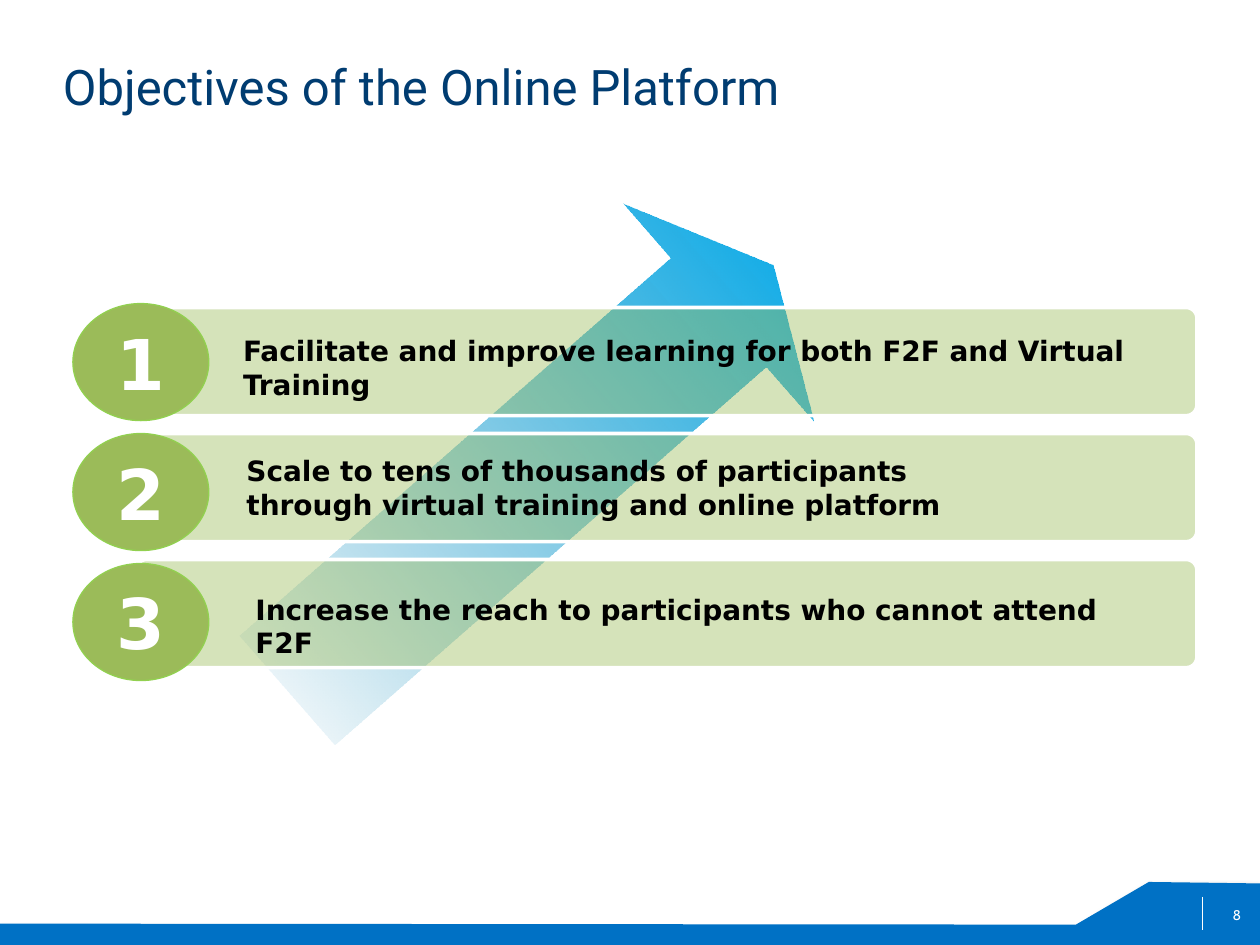
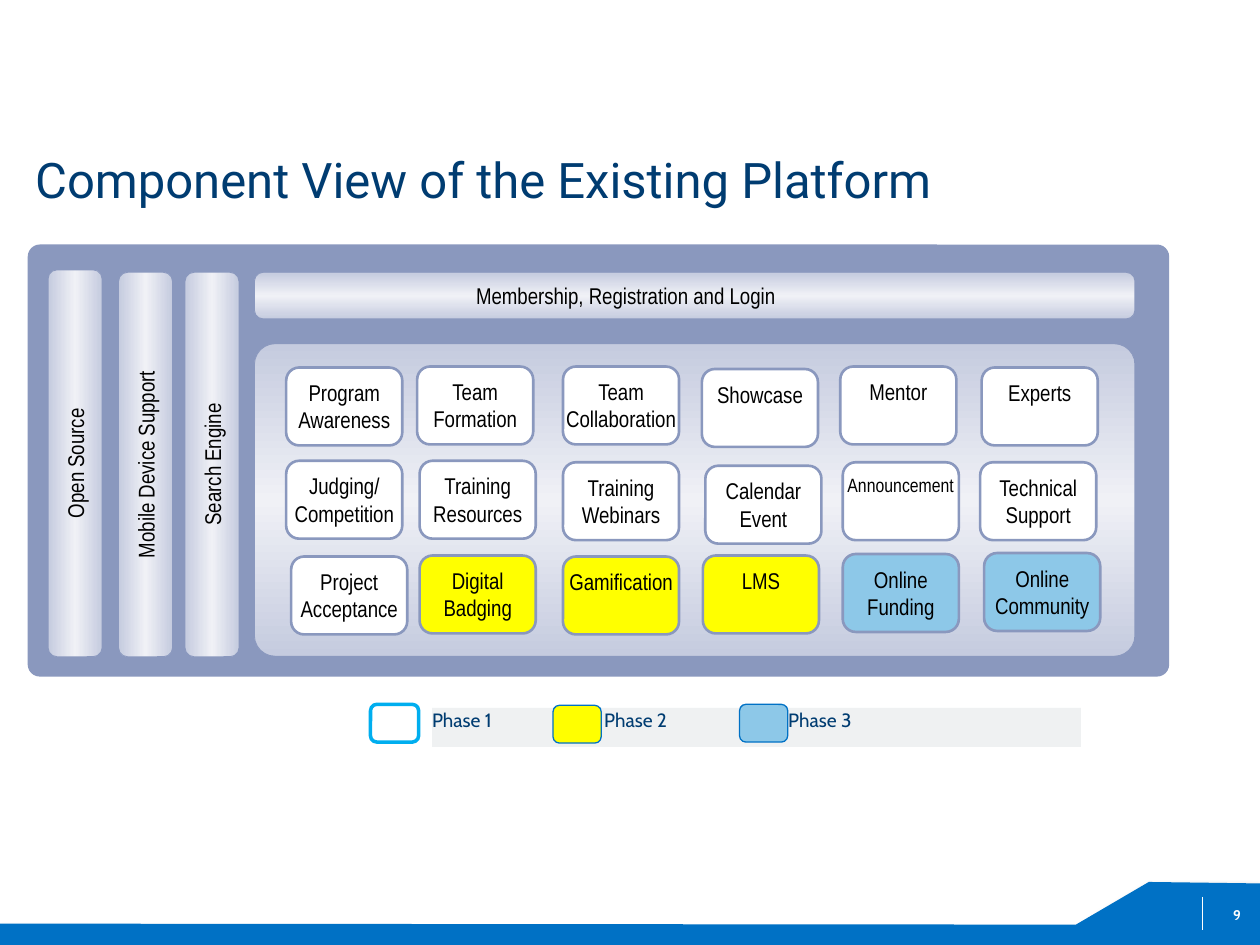
from lxml import etree
from pptx import Presentation
from pptx.dml.color import RGBColor
from pptx.enum.shapes import MSO_CONNECTOR, MSO_SHAPE
from pptx.enum.text import MSO_ANCHOR as ANCHOR, PP_ALIGN as ALIGN
from pptx.oxml.ns import qn
from pptx.util import Cm, Pt

WHITE = RGBColor(0xFF, 0xFF, 0xFF)
BLACK = RGBColor(0x00, 0x00, 0x00)
NAVY = RGBColor(0x00, 0x3C, 0x71)
BLUE = RGBColor(0x00, 0x71, 0xC5)
DEEP_CYAN = RGBColor(0x00, 0x7C, 0xAB)
CYAN = RGBColor(0x00, 0xAE, 0xEF)
OLIVE = RGBColor(0x9B, 0xBB, 0x59)
LIME = RGBColor(0x92, 0xD0, 0x50)
SLATE = RGBColor(0x8A, 0x98, 0xBE)
LAVENDER = RGBColor(0xC5, 0xCB, 0xDF)
PALE = RGBColor(0xF0, 0xF1, 0xF6)
GREY = RGBColor(0xEF, 0xF1, 0xF2)
YELLOW = RGBColor(0xFF, 0xFF, 0x00)
SKY = RGBColor(0x8D, 0xC8, 0xE8)

TITLE_FONT, FOOTER_FONT = "Roboto", "Cabin"
OBJECTIVE_FONT, COMPONENT_FONT = "DejaVu Sans", "Arial Narrow"

METAL = [(0, LAVENDER, 100), (50, PALE, 100), (100, LAVENDER, 100)]
FADE = [(0, DEEP_CYAN, 0), (100, CYAN, 100)]

SLIDE_WIDTH, SLIDE_HEIGHT = 25.4, 19.05
FOOTER_OUTLINE = [(SLIDE_WIDTH, 17.81), (23.16, 17.78), (21.69, 18.64),
                  (0, 18.62), (0, SLIDE_HEIGHT), (SLIDE_WIDTH, SLIDE_HEIGHT)]

# text, text indent and drop, badge drop
OBJECTIVES = [
    ("Facilitate and improve learning for both F2F and Virtual Training",
     1.91, 0.4, -0.08),
    ("Scale to tens of thousands of participants\n"
     "through virtual training and online platform", 1.98, 0.28, 0),
    ("Increase the reach to participants who cannot attend F2F",
     2.16, 0.53, 0.08),
]

# label, left and top within the panel, fill
COMPONENTS = [
    ("Program\nAwareness", 0.64, 0.48, WHITE),
    ("Team\nFormation", 3.28, 0.46, WHITE),
    ("Team\nCollaboration", 6.22, 0.46, WHITE),
    ("Showcase", 9.02, 0.51, WHITE),
    ("Mentor", 11.81, 0.46, WHITE),
    ("Experts", 14.66, 0.48, WHITE),
    ("Judging/\nCompetition", 0.64, 2.36, WHITE),
    ("Training\nResources", 3.33, 2.36, WHITE),
    ("Training\nWebinars", 6.22, 2.39, WHITE),
    ("Calendar\nEvent", 9.09, 2.46, WHITE),
    ("Announcement", 11.86, 2.39, WHITE),
    ("Technical\nSupport", 14.63, 2.39, WHITE),
    ("Project\nAcceptance", 0.74, 4.29, WHITE),
    ("Digital\nBadging", 3.33, 4.27, YELLOW),
    ("Gamification", 6.22, 4.29, YELLOW),
    ("LMS", 9.04, 4.27, YELLOW),
    ("Online\nFunding", 11.86, 4.24, SKY),
    ("Online\nCommunity", 14.71, 4.22, SKY),
]

# label, left and top within the frame
SIDE_BARS = [("Open Source", 0.41, 0.51),
             ("Mobile Device Support", 1.83, 0.56),
             ("Search Engine", 3.17, 0.56)]

# swatch left and top within the legend, fill, line, line width
PHASES = [(-1.24, -0.07, WHITE, CYAN, 2),
          (2.44, -0.05, YELLOW, BLUE, 0.75),
          (6.2, -0.07, SKY, BLUE, 0.75)]
PHASE_TABS = [3.47, 7.18]


def set_gradient(shape, stops, angle):
    """Fill with (position %, colour, opacity %) stops."""
    shape.fill.background()
    properties = shape._element.spPr
    gradient = etree.Element(qn("a:gradFill"), rotWithShape="1")
    stop_list = etree.SubElement(gradient, qn("a:gsLst"))
    for position, colour, opacity in stops:
        stop = etree.SubElement(stop_list, qn("a:gs"), pos=str(position * 1000))
        rgb = etree.SubElement(stop, qn("a:srgbClr"), val=str(colour))
        if opacity < 100:
            etree.SubElement(rgb, qn("a:alpha"), val=str(opacity * 1000))
    etree.SubElement(gradient, qn("a:lin"), ang=str(angle * 60000), scaled="0")
    properties.replace(properties.find(qn("a:noFill")), gradient)


def set_opacity(shape, percent):
    rgb = shape._element.spPr.find(qn("a:solidFill")).find(qn("a:srgbClr"))
    etree.SubElement(rgb, qn("a:alpha"), val=str(percent * 1000))


def add_shape(slide, kind, box, fill=None, line=None, line_width=0.5,
              adjustments=()):
    shape = slide.shapes.add_shape(kind, *map(Cm, box))
    shape.shadow.inherit = False
    if fill is not None:
        shape.fill.solid()
        shape.fill.fore_color.rgb = fill
    if line is None:
        shape.line.fill.background()
    else:
        shape.line.color.rgb = line
        shape.line.width = Pt(line_width)
    for index, value in enumerate(adjustments):
        shape.adjustments[index] = value
    return shape


def write(shape, text, font, size, colour, bold=False, align=ALIGN.LEFT,
          anchor=ANCHOR.TOP, margins=(0, 0, 0, 0), wrap=True):
    frame = shape.text_frame
    frame.text = text
    frame.word_wrap = wrap
    frame.vertical_anchor = anchor
    (frame.margin_left, frame.margin_top,
     frame.margin_right, frame.margin_bottom) = map(Cm, margins)
    for paragraph in frame.paragraphs:
        paragraph.alignment = align
        for run in paragraph.runs:
            run.font.name = font
            run.font.size = Pt(size)
            run.font.bold = bold
            run.font.color.rgb = colour


def add_text(slide, box, *args, **options):
    write(slide.shapes.add_textbox(*map(Cm, box)), *args, **options)


def add_footer(slide, number, bold):
    builder = slide.shapes.build_freeform(
        *map(Cm, FOOTER_OUTLINE[0]), scale=1.0)
    builder.add_line_segments(
        [(Cm(x), Cm(y)) for x, y in FOOTER_OUTLINE[1:]], close=True)
    band = builder.convert_to_shape()
    band.fill.solid()
    band.fill.fore_color.rgb = BLUE
    band.line.fill.background()
    band.shadow.inherit = False
    effects = band._element.spPr.find(qn("a:effectLst"))
    shadow = etree.SubElement(
        effects, qn("a:outerShdw"), blurRad=str(Pt(3.1)), dist=str(Pt(1.8)),
        dir="5400000", rotWithShape="0")
    rgb = etree.SubElement(shadow, qn("a:srgbClr"), val=str(BLACK))
    etree.SubElement(rgb, qn("a:alpha"), val="35000")

    divider = slide.shapes.add_connector(
        MSO_CONNECTOR.STRAIGHT, Cm(24.23), Cm(18.08), Cm(24.23), Cm(18.75))
    divider.line.color.rgb = WHITE
    divider.line.width = Pt(0.25)
    etree.SubElement(divider._element.spPr, qn("a:effectLst"))
    add_text(slide, (19.1, 17.93, 5.92, 1.02), str(number), FOOTER_FONT, 8,
             WHITE, bold=bold, align=ALIGN.RIGHT, anchor=ANCHOR.MIDDLE)


def start_slide(presentation, title, title_box, number, bold_number=False):
    slide = presentation.slides.add_slide(presentation.slide_layouts[6])
    add_footer(slide, number, bold_number)
    add_text(slide, title_box, title, TITLE_FONT, 28, NAVY)
    return slide


def add_rising_arrow(slide, box):
    arrow = add_shape(slide, MSO_SHAPE.RIGHT_ARROW, box,
                      adjustments=(0.5, 0.25))
    set_gradient(arrow, FADE, 0)
    arrow.rotation = 318.8


def add_objectives(slide, left, top, width, pitch):
    for index, (text, indent, drop, badge_drop) in enumerate(OBJECTIVES):
        row_top = top + index * pitch
        bar = add_shape(slide, MSO_SHAPE.ROUNDED_RECTANGLE,
                        (left, row_top, width, 2.18), OLIVE, WHITE, 2, (0.1,))
        set_opacity(bar, 41)
        add_text(slide, (left + indent, row_top + drop, 18.75, 1.63), text,
                 OBJECTIVE_FONT, 16, BLACK, bold=True,
                 margins=(0.25, 0.13, 0.25, 0.13))
        badge = add_shape(slide, MSO_SHAPE.OVAL,
                          (left - 1.27, row_top + badge_drop, 2.74, 2.36),
                          OLIVE, LIME, 0.75)
        write(badge, str(index + 1), OBJECTIVE_FONT, 40, WHITE, bold=True,
              align=ALIGN.CENTER, anchor=ANCHOR.MIDDLE, wrap=False)


def add_metal_block(slide, box, rounding, angle):
    block = add_shape(slide, MSO_SHAPE.ROUNDED_RECTANGLE, box, line=SLATE,
                      adjustments=(rounding,))
    set_gradient(block, METAL, angle)
    return block


def add_component_panel(slide, left, top):
    add_metal_block(slide, (left, top, 17.75, 6.3), 0.066, 90)
    for label, x, y, fill in COMPONENTS:
        card = add_shape(slide, MSO_SHAPE.ROUNDED_RECTANGLE,
                         (left + x, top + y, 2.34, 1.57), fill, SLATE, 1.5)
        size = 11 if label == "Announcement" else 13
        write(card, label, COMPONENT_FONT, size, BLACK, align=ALIGN.CENTER,
              margins=(0, 0.15, 0, 0), wrap=False)


def add_platform(slide, left, top):
    add_shape(slide, MSO_SHAPE.ROUNDED_RECTANGLE, (left, top, 23.01, 8.71),
              SLATE, adjustments=(0.028,))
    for label, x, y in SIDE_BARS:
        bar = add_metal_block(
            slide, (left + x, top + y, 1.09, 8.31 - y), 0.167, 0)
        write(bar, label, COMPONENT_FONT, 13, BLACK, align=ALIGN.CENTER,
              anchor=ANCHOR.MIDDLE, wrap=False)
        bar.text_frame._txBody.bodyPr.set("vert", "vert270")
    login = add_metal_block(
        slide, (left + 4.57, top + 0.56, 17.75, 0.94), 0.188, 90)
    write(login, "Membership, Registration and Login", COMPONENT_FONT, 13,
          BLACK, align=ALIGN.CENTER, anchor=ANCHOR.MIDDLE,
          margins=(0, 0, 2.79, 0))
    add_component_panel(slide, left + 4.57, top + 2)


def add_legend(slide, left, top):
    strip = add_shape(slide, MSO_SHAPE.RECTANGLE, (left, top, 13.08, 0.79),
                      GREY)
    write(strip, "Phase 1\tPhase 2\tPhase 3", FOOTER_FONT, 11, NAVY)
    properties = strip.text_frame.paragraphs[0]._p.get_or_add_pPr()
    tabs = etree.SubElement(properties, qn("a:tabLst"))
    for position in PHASE_TABS:
        etree.SubElement(tabs, qn("a:tab"), pos=str(Cm(position)), algn="l")
    for x, y, fill, line, line_width in PHASES:
        add_shape(slide, MSO_SHAPE.ROUNDED_RECTANGLE,
                  (left + x, top + y, 0.97, 0.76), fill, line, line_width)


def main():
    presentation = Presentation()
    presentation.slide_width = Cm(SLIDE_WIDTH)
    presentation.slide_height = Cm(SLIDE_HEIGHT)

    objectives = start_slide(presentation, "Objectives of the Online Platform",
                             (1.27, 1.14, 22.86, 3.23), 8)
    add_rising_arrow(objectives, (4.19, 6.71, 13, 5.84))
    add_objectives(objectives, 2.74, 6.2, 21.39, 2.54)

    components = start_slide(
        presentation, "Component View of the Existing Platform",
        (0.71, 3.02, 22.86, 2.41), 9, bold_number=True)
    add_platform(components, 0.56, 4.93)
    add_legend(components, 8.71, 14.27)

    presentation.save("out.pptx")


if __name__ == "__main__":
    main()
